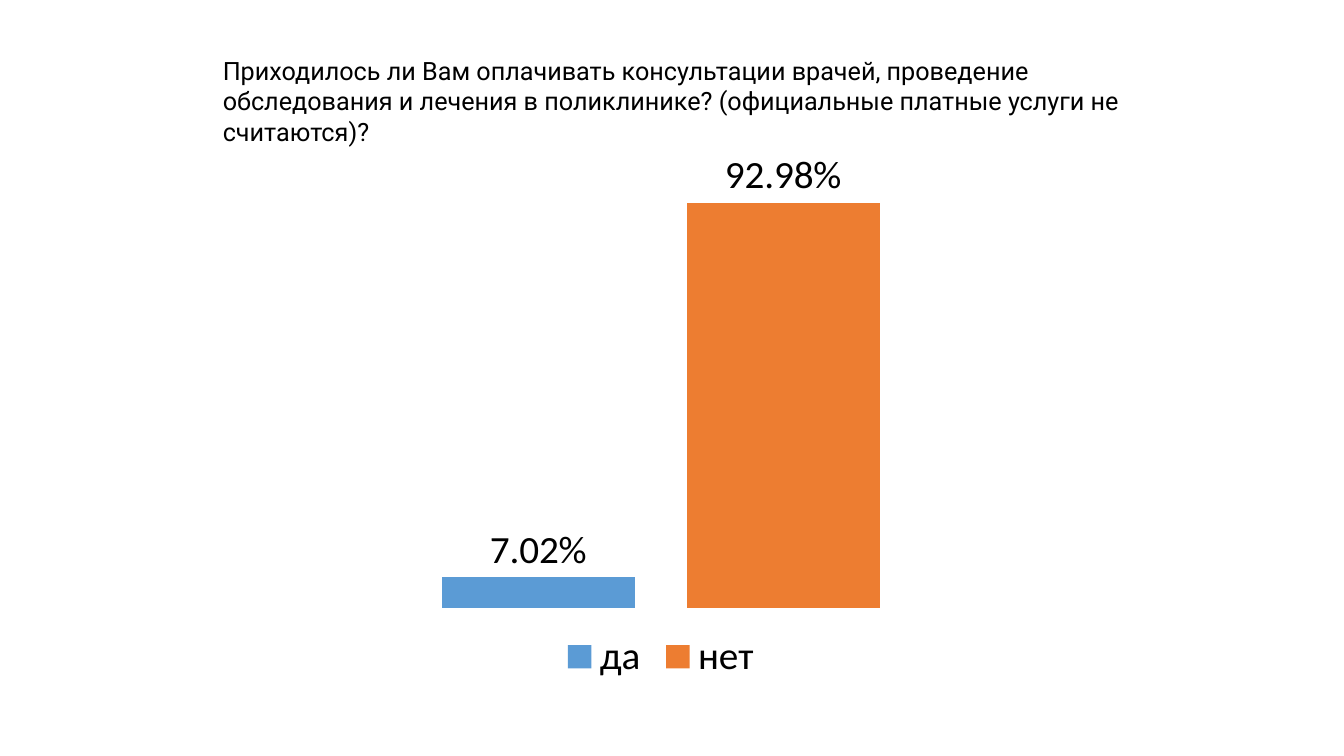
from dataclasses import dataclass

from pptx import Presentation
from pptx.chart.data import CategoryChartData
from pptx.dml.color import RGBColor
from pptx.enum.chart import XL_CHART_TYPE as ChartType
from pptx.enum.chart import XL_LABEL_POSITION as LabelPosition
from pptx.enum.chart import XL_LEGEND_POSITION as LegendPosition
from pptx.enum.text import MSO_ANCHOR, MSO_AUTO_SIZE, PP_ALIGN
from pptx.util import Cm, Pt

QUESTION = (
    "Приходилось ли Вам оплачивать консультации врачей, проведение обследования "
    "и лечения в поликлинике? (официальные платные услуги не считаются)?"
)
PERCENT = "0.00%"
LEFT = Cm(5.36)


@dataclass(frozen=True)
class Answer:
    name: str
    share: float
    color: str


ANSWERS = [
    Answer("да", 0.0702, "5B9BD5"),
    Answer("нет", 0.9298, "ED7D31"),
]


def rgb(value: str) -> RGBColor:
    return RGBColor.from_string(value)


def style_font(font, name: str, size: float, color: str = "000000") -> None:
    font.name = name
    font.size = Pt(size)
    font.bold = False
    font.color.rgb = rgb(color)


def add_question(slide, text: str) -> None:
    title = slide.shapes.title
    title.left, title.top, title.width, title.height = LEFT, Cm(1.27), Cm(23.14), Cm(2.56)
    frame = title.text_frame
    frame.text = text
    frame.word_wrap = True
    frame.auto_size = MSO_AUTO_SIZE.SHAPE_TO_FIT_TEXT
    frame.vertical_anchor = MSO_ANCHOR.TOP
    paragraph = frame.paragraphs[0]
    paragraph.alignment = PP_ALIGN.LEFT
    style_font(paragraph.runs[0].font, "Roboto", 18)


def style_answer(series, answer: Answer) -> None:
    series.format.fill.solid()
    series.format.fill.fore_color.rgb = rgb(answer.color)
    series.invert_if_negative = False
    labels = series.data_labels
    labels.show_value = True
    labels.position = LabelPosition.OUTSIDE_END
    labels.number_format = PERCENT
    labels.number_format_is_linked = False
    style_font(labels.font, "Calibri", 28)


def add_answer_chart(slide, answers: list[Answer]) -> None:
    data = CategoryChartData(number_format=PERCENT)
    data.categories = ["1"]
    for answer in answers:
        data.add_series(answer.name, [answer.share])
    chart = slide.shapes.add_chart(
        ChartType.COLUMN_CLUSTERED, LEFT, Cm(3.84), Cm(22.58), Cm(13.49), data
    ).chart
    style_font(chart.font, "Calibri", 28)
    chart.has_title = False
    chart.has_legend = True
    chart.legend.position = LegendPosition.BOTTOM
    chart.legend.include_in_layout = False
    style_font(chart.legend.font, "Calibri", 28)
    chart.category_axis.visible = False
    value_axis = chart.value_axis
    value_axis.visible = False
    value_axis.has_major_gridlines = False
    value_axis.minimum_scale, value_axis.maximum_scale = 0, 1
    plot = chart.plots[0]
    plot.vary_by_categories = False
    plot.gap_width, plot.overlap = 219, -27
    for series, answer in zip(plot.series, answers):
        style_answer(series, answer)


def main() -> None:
    presentation = Presentation()
    presentation.slide_width, presentation.slide_height = Cm(33.87), Cm(19.05)
    slide = presentation.slides.add_slide(presentation.slide_layouts[5])
    add_answer_chart(slide, ANSWERS)
    add_question(slide, QUESTION)
    presentation.save("out.pptx")


if __name__ == "__main__":
    main()
